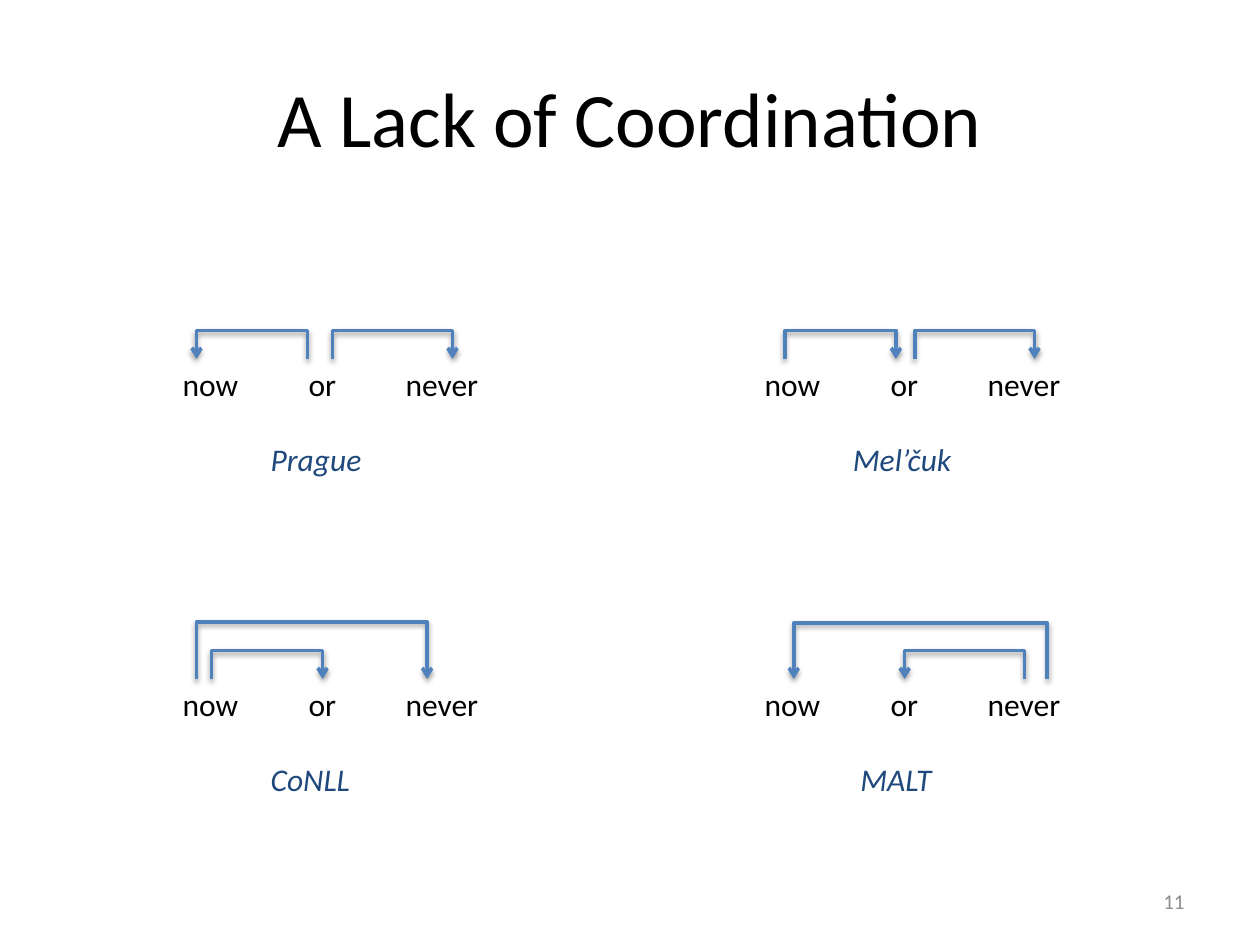
from lxml.etree import SubElement
from pptx import Presentation
from pptx.dml.color import RGBColor
from pptx.enum.shapes import MSO_CONNECTOR
from pptx.enum.text import MSO_ANCHOR, PP_ALIGN
from pptx.oxml import parse_xml
from pptx.oxml.ns import nsdecls, qn
from pptx.util import Emu, Inches, Pt

BLACK = RGBColor(0x00, 0x00, 0x00)
GRAY = RGBColor(0x8C, 0x8C, 0x8C)
NAVY = RGBColor(0x1F, 0x49, 0x7D)
BLUE = RGBColor(0x4F, 0x81, 0xBD)

WIDTH, HEIGHT = Inches(10), Inches(7.5)
COLS, ROWS = 100, 75
ARC_DEPTH = 1588
TEXT_ROWS = 4

WORDS = [("now", 0, 6.5), ("or", 10, 4.2), ("never", 17.7, 7.8)]
PANEL_COLS = [13.5, 59.7]
PANEL_ROWS = [28.5, 53.9]
PANELS = [
    ("Prague", 7, 9.9, [(12.9, 22.4, 2.5), (10.9, 2.1, 2.5)]),
    ("Mel’čuk", 7, 10.5, [(12.9, 22.4, 2.5), (2.6, 11.4, 2.5)]),
    ("CoNLL", 7, 9, [(3.3, 12.1, 2.5), (2.1, 20.4, 5)]),
    ("MALT", 7.6, 8.4, [(21.6, 12.1, 2.5), (23.4, 3.3, 4.9)]),
]

SHADOW = (
    f'<a:effectLst {nsdecls("a")}><a:outerShdw blurRad="40000" dist="20000" '
    'dir="5400000" rotWithShape="0"><a:srgbClr val="000000">'
    '<a:alpha val="38000"/></a:srgbClr></a:outerShdw></a:effectLst>'
)


def col(n):
    return Emu(round(WIDTH * n / COLS))


def row(n):
    return Emu(round(HEIGHT * n / ROWS))


def add_text(shapes, text, box, size, color, align=PP_ALIGN.LEFT,
             anchor=MSO_ANCHOR.TOP, wrap=False, italic=False):
    x, y, w, h = box
    tf = shapes.add_textbox(col(x), row(y), col(w), row(h)).text_frame
    tf.word_wrap = wrap
    tf.vertical_anchor = anchor
    p = tf.paragraphs[0]
    p.text = text
    p.alignment = align
    font = p.runs[0].font
    font.name = "Calibri"
    font.size = Pt(size)
    font.italic = italic
    font.color.rgb = color


def add_arc(shapes, start, end, base, rise):
    span = col(abs(end - start))
    left = col((start + end) / 2) - ARC_DEPTH // 2
    top = row(base) - span // 2
    arc = shapes.add_connector(MSO_CONNECTOR.ELBOW, left, top,
                               left + ARC_DEPTH, top + span)
    arc.line.color.rgb = BLUE
    arc.line.width = Pt(2)
    spPr = arc._element.spPr
    xfrm = spPr.find(qn("a:xfrm"))
    xfrm.set("flipV", "1")
    if start < end:
        xfrm.set("flipH", "1")
    xfrm.set("rot", "5400000" if start < end else "16200000")
    guides = spPr.find(qn("a:prstGeom")).get_or_add_avLst()
    bend = round(row(rise) / ARC_DEPTH * 100000)
    SubElement(guides, qn("a:gd"), name="adj1", fmla=f"val {bend}")
    SubElement(spPr.find(qn("a:ln")), qn("a:tailEnd"), type="arrow")
    spPr.append(parse_xml(SHADOW))


def add_panel(s, x, y, label, label_x, label_w, arcs):
    shapes = s.shapes.add_group_shape().shapes
    for word, dx, w in WORDS:
        add_text(shapes, word, (x + dx, y, w, TEXT_ROWS), 18, BLACK)
    add_text(shapes, label, (x + label_x, y + 5.9, label_w, TEXT_ROWS),
             18, NAVY, italic=True)
    for start, end, rise in arcs:
        add_arc(shapes, x + start, x + end, y, rise)


def add_heading(s, box):
    add_text(s.shapes, "A Lack of Coordination", box, 44, BLACK,
             PP_ALIGN.CENTER, MSO_ANCHOR.MIDDLE, wrap=True)


def add_page_number(s, box):
    add_text(s.shapes, "11", box, 12, GRAY,
             PP_ALIGN.RIGHT, MSO_ANCHOR.MIDDLE, wrap=True)


def main():
    prs = Presentation()
    prs.slide_width, prs.slide_height = WIDTH, HEIGHT
    s = prs.slides.add_slide(prs.slide_layouts[6])
    add_heading(s, (5, 3, 90, 12.5))
    add_page_number(s, (71.7, 69.5, 23.3, TEXT_ROWS))
    for i, panel in enumerate(PANELS):
        r, c = divmod(i, len(PANEL_COLS))
        add_panel(s, PANEL_COLS[c], PANEL_ROWS[r], *panel)
    prs.save("out.pptx")


if __name__ == "__main__":
    main()
